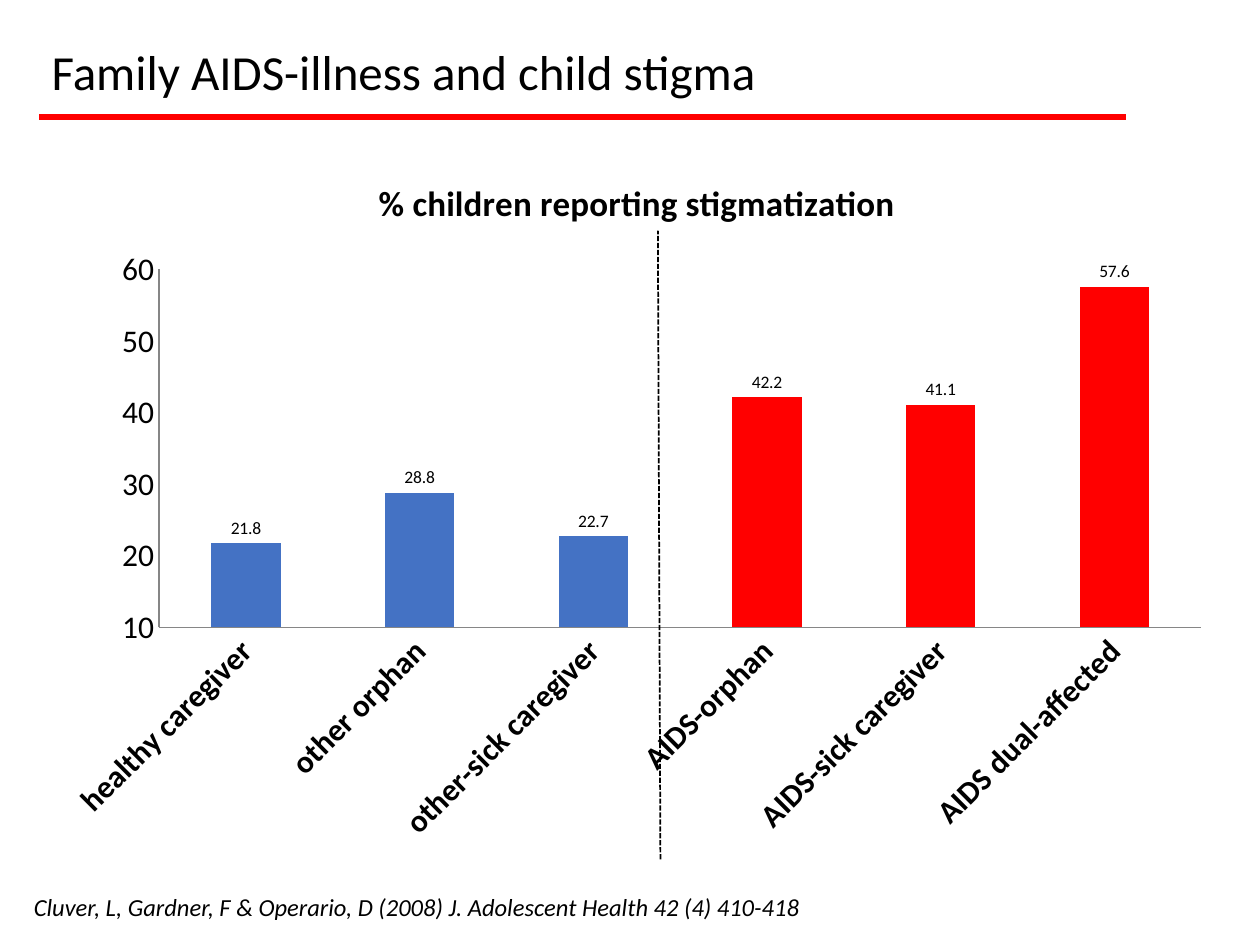
from dataclasses import dataclass

from lxml import etree
from pptx import Presentation
from pptx.chart.data import CategoryChartData
from pptx.dml.color import RGBColor
from pptx.enum.chart import XL_CHART_TYPE, XL_LABEL_POSITION, XL_TICK_MARK
from pptx.enum.dml import MSO_LINE
from pptx.enum.shapes import MSO_CONNECTOR
from pptx.enum.text import MSO_ANCHOR, MSO_AUTO_SIZE, PP_ALIGN
from pptx.oxml.ns import qn
from pptx.util import Inches, Pt

COLUMN_CLUSTERED = XL_CHART_TYPE.COLUMN_CLUSTERED
OUTSIDE_END = XL_LABEL_POSITION.OUTSIDE_END
NO_TICK = XL_TICK_MARK.NONE
SHORT_DASH = MSO_LINE.SQUARE_DOT
STRAIGHT = MSO_CONNECTOR.STRAIGHT
MIDDLE = MSO_ANCHOR.MIDDLE
LEFT = PP_ALIGN.LEFT
FIT_SHAPE = MSO_AUTO_SIZE.SHAPE_TO_FIT_TEXT
FIXED_SIZE = MSO_AUTO_SIZE.NONE

WIDTH, HEIGHT = Inches(10), Inches(7.5)
COLUMN, ROW = WIDTH / 100, HEIGHT / 75
TITLE_LAYOUT = 5

STIGMA = {
    "healthy caregiver": 21.8,
    "other orphan": 28.8,
    "other-sick caregiver": 22.7,
    "AIDS-orphan": 42.2,
    "AIDS-sick caregiver": 41.1,
    "AIDS dual-affected": 57.6,
}


@dataclass(frozen=True)
class Theme:
    """Colours and type sizes of the slide."""
    font: str = "Calibri"
    ink: RGBColor = RGBColor(0, 0, 0)
    axis: RGBColor = RGBColor(0x86, 0x86, 0x86)
    other: RGBColor = RGBColor(0x44, 0x72, 0xC4)
    aids: RGBColor = RGBColor(0xFF, 0, 0)
    title: int = 28
    chart_title: int = 20
    axis_label: int = 18
    source: int = 14
    value_label: int = 10


THEME = Theme()


def grid(*lengths):
    """Turn alternating columns and rows into slide lengths."""
    return [int(length * unit) for length, unit in zip(lengths, (COLUMN, ROW) * 2)]


def format_font(font, size, bold=False, italic=False):
    """Apply the theme face and ink to a font."""
    font.name, font.size, font.bold, font.italic = THEME.font, Pt(size), bold, italic
    font.color.rgb = THEME.ink


def write_text(frame, text, size, line_spacing=None, **style):
    """Write one left-aligned formatted paragraph."""
    paragraph = frame.paragraphs[0]
    paragraph.alignment = LEFT
    paragraph.line_spacing = line_spacing
    run = paragraph.add_run()
    run.text = text
    format_font(run.font, size, **style)


def add_line(slide, start, end, color, width, dash=None):
    """Draw a straight line between two grid points."""
    line = slide.shapes.add_connector(STRAIGHT, *grid(*start), *grid(*end))
    line.line.color.rgb = color
    line.line.width = Pt(width)
    if dash is not None:
        line.line.dash_style = dash
    etree.SubElement(line.element.spPr, qn("a:effectLst"))


def add_heading(slide, box, text):
    """Place the slide title with its red rule."""
    title = slide.shapes.title
    title.left, title.top, title.width, title.height = grid(*box)
    frame = title.text_frame
    frame.auto_size = FIXED_SIZE
    frame.word_wrap = True
    frame.vertical_anchor = MIDDLE
    frame.margin_bottom = int(4.7 * ROW)
    write_text(frame, text, THEME.title, line_spacing=0.9)
    left, top, width, _ = box
    rule = top + 4.1
    add_line(slide, (left, rule), (left + width - 3.7, rule), THEME.aids, 3.25)


def format_axis(axis, bold=False):
    """Give an axis its line, labels and no ticks or gridlines."""
    axis.has_major_gridlines = False
    axis.major_tick_mark = axis.minor_tick_mark = NO_TICK
    axis.format.line.color.rgb = THEME.axis
    axis.format.line.width = Pt(0.75)
    format_font(axis.tick_labels.font, THEME.axis_label, bold=bold)


def add_stigma_chart(slide, box, title):
    """Place the column chart and the line that divides its two groups."""
    data = CategoryChartData()
    data.categories = list(STIGMA)
    data.add_series("Series 1", list(STIGMA.values()))
    chart = slide.shapes.add_chart(COLUMN_CLUSTERED, *grid(*box), data).chart
    chart.has_legend = False
    format_font(chart.font, THEME.value_label)
    chart.has_title = True
    chart.chart_title.include_in_layout = False
    write_text(chart.chart_title.text_frame, title, THEME.chart_title, bold=True)

    format_axis(chart.category_axis, bold=True)
    format_axis(chart.value_axis)
    chart.value_axis.minimum_scale = 10
    chart.value_axis.maximum_scale = 60
    chart.value_axis.major_unit = 10
    for body in chart.element.xpath(".//c:catAx/c:txPr/a:bodyPr"):
        body.set("rot", str(-45 * 60000))

    plot = chart.plots[0]
    plot.gap_width = 150
    plot.vary_by_categories = False
    plot.has_data_labels = True
    labels = plot.data_labels
    labels.show_value = True
    labels.position = OUTSIDE_END
    format_font(labels.font, THEME.value_label)
    series = plot.series[0]
    series.format.fill.solid()
    series.format.fill.fore_color.rgb = THEME.other
    for index, category in enumerate(STIGMA):
        if category.startswith("AIDS"):
            fill = series.points[index].format.fill
            fill.solid()
            fill.fore_color.rgb = THEME.aids

    left, top, width, height = box
    middle = left + width * 0.52
    add_line(slide, (middle, top + height + 0.3), (middle - 0.2, top + 6.3),
             THEME.ink, 1, SHORT_DASH)


def add_source(slide, box, text):
    """Place the citation at the foot of the slide."""
    frame = slide.shapes.add_textbox(*grid(*box)).text_frame
    frame.word_wrap = True
    frame.auto_size = FIT_SHAPE
    write_text(frame, text, THEME.source, italic=True)


def main():
    """Build and save the slide."""
    presentation = Presentation()
    presentation.slide_width, presentation.slide_height = WIDTH, HEIGHT
    slide = presentation.slides.add_slide(presentation.slide_layouts[TITLE_LAYOUT])
    add_stigma_chart(slide, (3.9, 12, 93.3, 55.9), "% children reporting stigmatization")
    add_source(slide, (1.7, 70.3, 71.7, 3.4),
               "Cluver, L, Gardner, F & Operario, D (2008) J. Adolescent Health 42 (4) 410-418")
    add_heading(slide, (3.1, 5.2, 90, 5.6), "Family AIDS-illness and child stigma")
    presentation.save("out.pptx")


if __name__ == "__main__":
    main()
